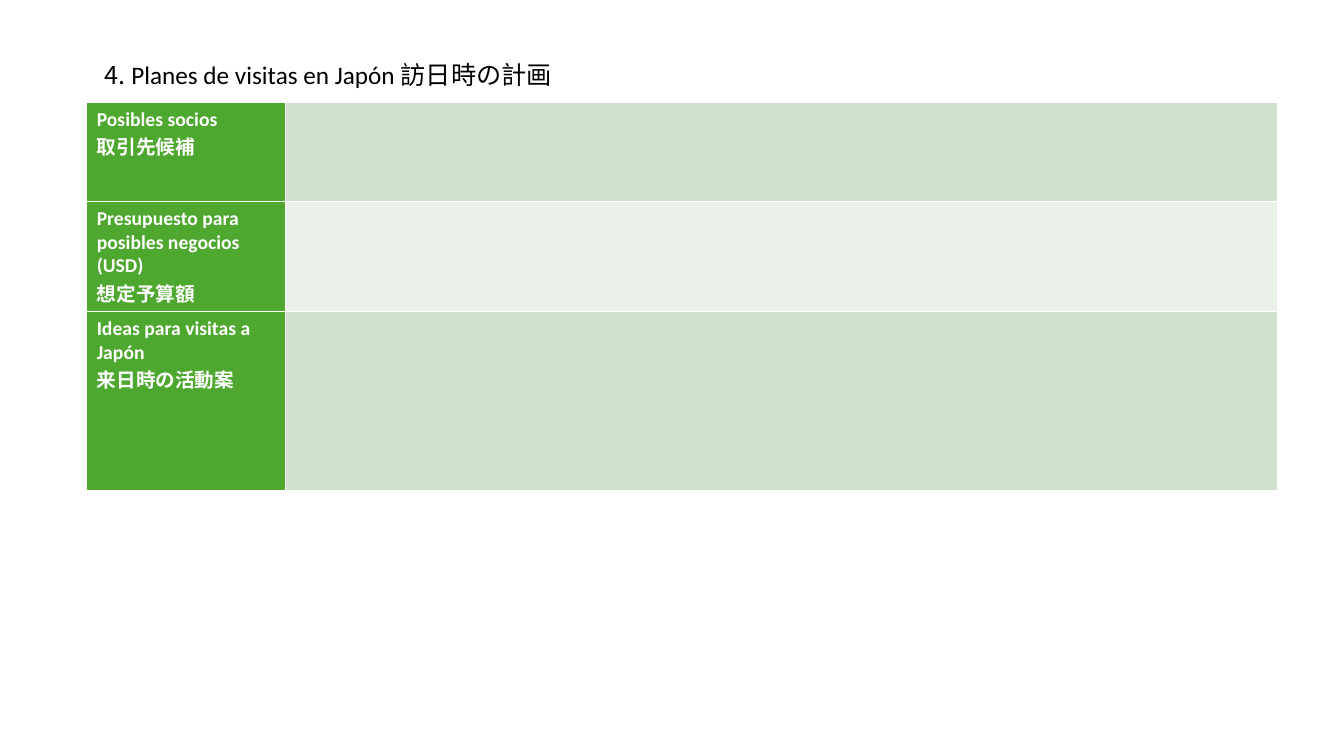
from lxml import etree
from pptx import Presentation, util as u
from pptx.dml.color import RGBColor
from pptx.enum import text
from pptx.oxml.ns import qn

LATIN, JAPANESE = "Calibri", "Noto Sans CJK JP"
WHITE, BLACK, GREEN = "FFFFFF", "000000", "4EA72E"
BANDS = ("D0E1CD", "E9F1E8")
COLUMNS = (1.97, 9.84)
# Row height, Spanish label, Japanese label
ROWS = (
    (0.98, "Posibles socios", "取引先候補"),
    (1.06, "Presupuesto para posibles negocios (USD)", "想定予算額"),
    (1.77, "Ideas para visitas a Japón", "来日時の活動案"),
)


def color(value):
    return RGBColor.from_string(value)


def add_text(paragraph, words, font=LATIN, size=14, fill=BLACK, bold=False):
    run = paragraph.add_run()
    run.text = words
    run.font.name = font
    run.font.size = u.Pt(size)
    run.font.bold = bold
    run.font.color.rgb = color(fill)
    east_asian = etree.SubElement(run._r.get_or_add_rPr(), qn("a:ea"))
    east_asian.set("typeface", JAPANESE)


def set_borders(cell, line_color, width):
    properties = cell._tc.get_or_add_tcPr()
    for index, side in enumerate(("lnL", "lnR", "lnT", "lnB")):
        line = etree.Element(qn("a:" + side), w=str(u.Pt(width)))
        fill = etree.SubElement(line, qn("a:solidFill"))
        etree.SubElement(fill, qn("a:srgbClr"), val=line_color)
        properties.insert(index, line)


def add_title(slide, left, top, width, height):
    shape = slide.shapes.add_textbox(*map(u.Inches, (left, top, width, height)))
    frame = shape.text_frame
    frame.word_wrap = True
    frame.auto_size = text.MSO_AUTO_SIZE.SHAPE_TO_FIT_TEXT
    for words, font in (("4.", JAPANESE), (" Planes de visitas en Japón ", LATIN),
                        ("訪日時の計画", JAPANESE)):
        add_text(frame.paragraphs[0], words, font=font, size=18)


def add_plan_table(slide, left, top):
    box = (left, top, sum(COLUMNS), sum(row[0] for row in ROWS))
    table = slide.shapes.add_table(len(ROWS), len(COLUMNS), *map(u.Inches, box)).table
    table.first_row = False
    table.first_col = True
    for column, width in zip(table.columns, COLUMNS):
        column.width = u.Inches(width)
    for index, (height, spanish, japanese) in enumerate(ROWS):
        table.rows[index].height = u.Inches(height)
        label, answer = table.rows[index].cells
        # Bilingual label
        frame = label.text_frame
        add_text(frame.paragraphs[0], spanish, fill=WHITE, bold=True)
        add_text(frame.add_paragraph(), japanese, font=JAPANESE, fill=WHITE, bold=True)
        # Fills and borders
        for cell, fill in ((label, GREEN), (answer, BANDS[index % 2])):
            cell.fill.solid()
            cell.fill.fore_color.rgb = color(fill)
            set_borders(cell, WHITE, 1)


def main():
    presentation = Presentation()
    presentation.slide_width = u.Inches(13.33)
    presentation.slide_height = u.Inches(7.5)
    slide = presentation.slides.add_slide(presentation.slide_layouts[6])
    add_plan_table(slide, 0.86, 1.02)
    add_title(slide, 0.94, 0.54, 6.67, 0.4)
    presentation.save("out.pptx")


if __name__ == "__main__":
    main()
